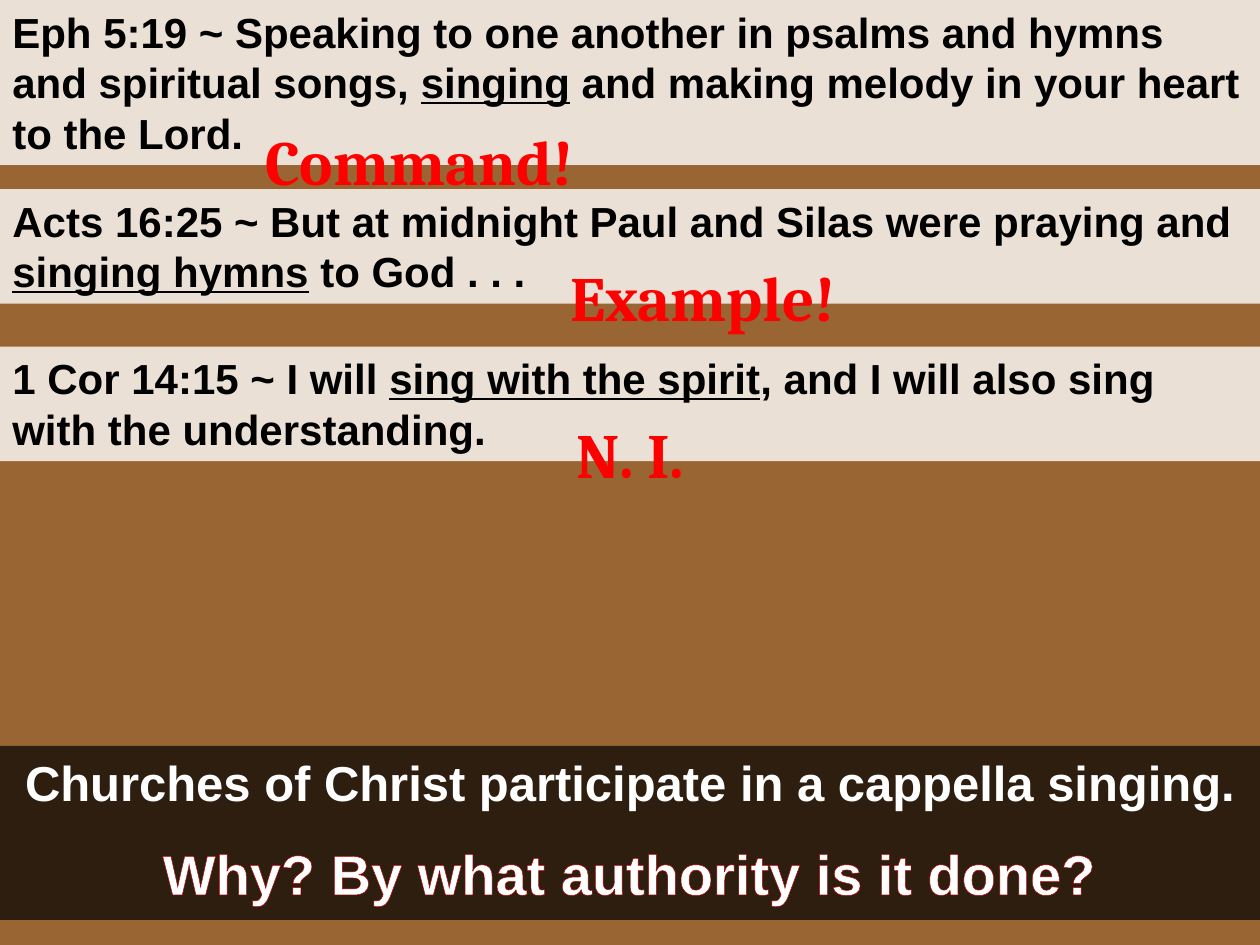
from dataclasses import dataclass

from lxml.etree import SubElement
from pptx import Presentation
from pptx.dml.color import RGBColor
from pptx.enum.shapes import MSO_SHAPE as Shape
from pptx.enum.text import MSO_ANCHOR as Anchor, MSO_AUTO_SIZE as AutoSize, PP_ALIGN as Align
from pptx.oxml.ns import qn
from pptx.util import Inches, Pt

BROWN = RGBColor(0x99, 0x66, 0x33)
BLACK = RGBColor(0, 0, 0)
WHITE = RGBColor(0xFF, 0xFF, 0xFF)
RED = RGBColor(0xFF, 0, 0)
DARK_RED = RGBColor(0xC0, 0, 0)

SLIDE_WIDTH, SLIDE_HEIGHT = Inches(10), Inches(7.5)
LABEL_HEIGHT = 0.33

VERSE_FONT = dict(name="Arial", size=Pt(24), bold=True)
LABEL_FONT = dict(name="Cambria", size=Pt(36), bold=True)
CLAIM_FONT = dict(name="Arial", size=Pt(28), bold=True)
QUESTION_FONT = CLAIM_FONT | dict(size=Pt(32))


@dataclass
class Verse:
    """A scripture band and the kind of authority it gives; lengths in inches."""
    top: float
    height: float
    before: str
    key_words: str
    after: str
    label: str
    label_left: float
    label_top: float
    label_width: float


VERSES = [
    Verse(0, 1.31,
          "Eph 5:19 ~ Speaking to one another in psalms and hymns and spiritual songs, ",
          "singing", " and making melody in your heart to the Lord.",
          "Command!", 2.08, 0.92, 2.5),
    Verse(1.5, 0.91,
          "Acts 16:25 ~ But at midnight Paul and Silas were praying and ",
          "singing hymns", " to God . . .",
          "Example!", 4.33, 2, 2.5),
    Verse(2.75, 0.91,
          "1 Cor 14:15 ~ I will ",
          "sing with the spirit", ", and I will also sing with the understanding.",
          "N. I.", 4.38, 3.25, 1.25),
]


def add_run(paragraph, text: str, font: dict, color: RGBColor, outlined: bool = False):
    run = paragraph.add_run()
    run.text = text
    for attribute, value in font.items():
        setattr(run.font, attribute, value)
    run.font.color.rgb = color
    if outlined:
        properties = run._r.get_or_add_rPr()
        outline = SubElement(properties, qn("a:ln"), w=str(Pt(0.75)))
        fill = SubElement(outline, qn("a:solidFill"))
        SubElement(fill, qn("a:srgbClr"), val=str(DARK_RED))
        properties.insert(0, outline)  # the outline comes before the fill


def add_band(slide, top: float, height: float, color: RGBColor, opacity: int):
    """Add a see-through band across the slide and return its text frame."""
    band = slide.shapes.add_shape(Shape.RECTANGLE, 0, Inches(top), SLIDE_WIDTH, Inches(height))
    band.shadow.inherit = False
    band.line.fill.background()
    band.fill.solid()
    band.fill.fore_color.rgb = color
    color_node = band._element.spPr.find(".//" + qn("a:srgbClr"))
    SubElement(color_node, qn("a:alpha"), val=str(opacity * 1000))
    frame = band.text_frame
    frame.word_wrap = True
    frame.auto_size = AutoSize.SHAPE_TO_FIT_TEXT
    frame.vertical_anchor = Anchor.TOP
    return frame


def add_verse(slide, verse: Verse):
    passage = add_band(slide, verse.top, verse.height, WHITE, 80).paragraphs[0]
    passage.alignment = Align.LEFT
    add_run(passage, verse.before, VERSE_FONT, BLACK)
    add_run(passage, verse.key_words, VERSE_FONT | dict(underline=True), BLACK, outlined=True)
    add_run(passage, verse.after, VERSE_FONT, BLACK)

    label = slide.shapes.add_textbox(
        *map(Inches, (verse.label_left, verse.label_top, verse.label_width, LABEL_HEIGHT)))
    frame = label.text_frame
    frame.word_wrap = False
    frame.margin_left = frame.margin_right = 0  # keeps the label on one line
    word = frame.paragraphs[0]
    word.alignment = Align.CENTER
    add_run(word, verse.label, LABEL_FONT, RED)


def add_closing(slide):
    frame = add_band(slide, 5.92, 1.38, BLACK, 70)
    claim, question = frame.paragraphs[0], frame.add_paragraph()
    claim.alignment = question.alignment = Align.CENTER
    question.space_before = Pt(16)
    add_run(claim, "Churches of Christ participate in a cappella singing.", CLAIM_FONT, WHITE)
    add_run(question, "Why? By what authority is it done?", QUESTION_FONT, WHITE, outlined=True)


def main():
    deck = Presentation()
    deck.slide_width, deck.slide_height = SLIDE_WIDTH, SLIDE_HEIGHT
    slide = deck.slides.add_slide(deck.slide_layouts[6])  # blank: the slide has no title
    slide.background.fill.solid()
    slide.background.fill.fore_color.rgb = BROWN

    # Closing question, then the verses that answer it
    add_closing(slide)
    for verse in VERSES:
        add_verse(slide, verse)

    deck.save("out.pptx")


if __name__ == "__main__":
    main()
